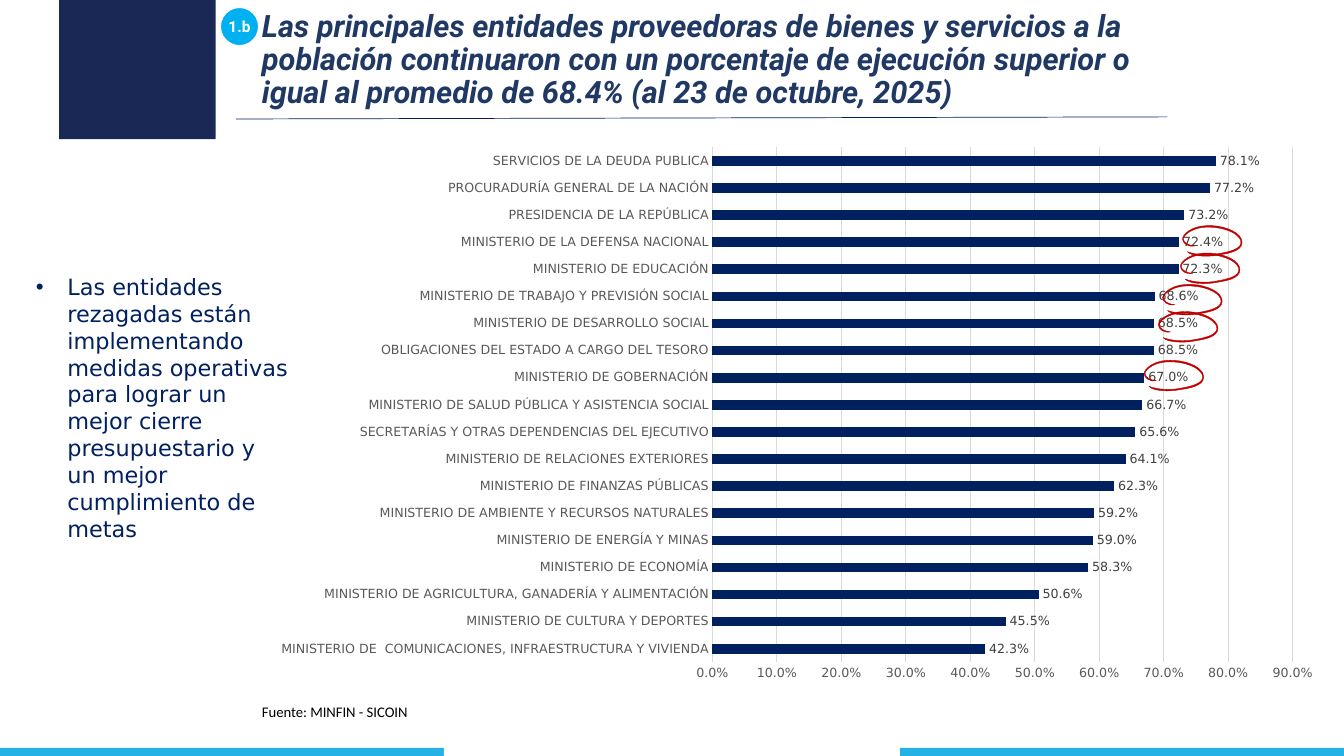
from lxml import etree
from pptx import Presentation
from pptx.chart.data import CategoryChartData
from pptx.dml.color import RGBColor
from pptx.enum.chart import XL_CHART_TYPE, XL_LABEL_POSITION, XL_TICK_MARK
from pptx.enum.shapes import MSO_CONNECTOR, MSO_SHAPE
from pptx.enum.text import MSO_ANCHOR, PP_ALIGN
from pptx.oxml import parse_xml
from pptx.oxml.ns import qn
from pptx.util import Pt

BAR = XL_CHART_TYPE.BAR_CLUSTERED
OUT = XL_LABEL_POSITION.OUTSIDE_END
NO_TICK = XL_TICK_MARK.NONE
RECT, OVAL = MSO_SHAPE.RECTANGLE, MSO_SHAPE.OVAL
TOP, MID, LOW = MSO_ANCHOR.TOP, MSO_ANCHOR.MIDDLE, MSO_ANCHOR.BOTTOM
SANS, HEAD = "DejaVu Sans", "Roboto"
NAVY, RED, GRID, WHITE, SKY = "002060", "C00000", "D9D9D9", "FFFFFF", "23B2E3"

TITLE = ("Las principales entidades proveedoras de bienes y servicios a la "
         "población continuaron con un porcentaje de ejecución superior o "
         "igual al promedio de 68.4% (al 23 de octubre, 2025)")
NOTE = ("Las entidades rezagadas están implementando medidas operativas para "
        "lograr un mejor cierre presupuestario y un mejor cumplimiento de metas")
SOURCE = "Fuente: MINFIN - SICOIN"
RATES = [
    ("MINISTERIO DE  COMUNICACIONES, INFRAESTRUCTURA Y VIVIENDA", 0.423),
    ("MINISTERIO DE CULTURA Y DEPORTES", 0.455),
    ("MINISTERIO DE AGRICULTURA, GANADERÍA Y ALIMENTACIÓN", 0.506),
    ("MINISTERIO DE ECONOMÍA", 0.583),
    ("MINISTERIO DE ENERGÍA Y MINAS", 0.59),
    ("MINISTERIO DE AMBIENTE Y RECURSOS NATURALES", 0.592),
    ("MINISTERIO DE FINANZAS PÚBLICAS", 0.623),
    ("MINISTERIO DE RELACIONES EXTERIORES", 0.641),
    ("SECRETARÍAS Y OTRAS DEPENDENCIAS DEL EJECUTIVO", 0.656),
    ("MINISTERIO DE SALUD PÚBLICA Y ASISTENCIA SOCIAL", 0.667),
    ("MINISTERIO DE GOBERNACIÓN", 0.67),
    ("OBLIGACIONES DEL ESTADO A CARGO DEL TESORO", 0.685),
    ("MINISTERIO DE DESARROLLO SOCIAL", 0.685),
    ("MINISTERIO DE TRABAJO Y PREVISIÓN SOCIAL", 0.686),
    ("MINISTERIO DE EDUCACIÓN", 0.723),
    ("MINISTERIO DE LA DEFENSA NACIONAL", 0.724),
    ("PRESIDENCIA DE LA REPÚBLICA", 0.732),
    ("PROCURADURÍA GENERAL DE LA NACIÓN", 0.772),
    ("SERVICIOS DE LA DEUDA PUBLICA", 0.781),
]
# Plot area within the chart, in percent
PLOT = {"x": 42.1, "y": 2.2, "w": 54, "h": 92.4}

# Hand-drawn ring: start, then curves (two controls and an end), in points
START = (3.5, 19.4)
CURVES = [
    ((10, 21.8), (18.7, 22.2), (25.3, 20.9)),
    ((34.3, 19.4), (41.8, 17.3), (41.8, 12.8)),
    ((41.8, 8), (33.8, 2.9), (21.4, 2)),
    ((7.2, 0.9), (0.7, 7.9), (0.7, 10.2)),
    ((0.7, 12.8), (4.3, 15), (8.8, 15.3)),
    ((3.5, 16.4), (0, 13), (0, 10.2)),
    ((0, 7.8), (5.6, 0), (21.4, 0.8)),
    ((31.5, 1.4), (42.6, 6), (42.6, 12.8)),
    ((42.6, 19.4), (31.5, 20.9), (25.1, 21.9)),
    ((18.7, 23.2), (6.2, 23), (3.5, 19.4)),
]
RINGS = [(843.1, 180), (827.4, 221.8), (830.4, 202.4),
         (817.2, 256.6), (844.6, 160.4)]


def rgb(code):
    return RGBColor.from_string(code)


def shape(kind, box, fill):
    item = slide.shapes.add_shape(kind, *map(Pt, box))
    item.shadow.inherit = False
    item.fill.solid()
    item.fill.fore_color.rgb = rgb(fill)
    item.line.fill.background()
    return item


def style(font, name, size, color):
    font.name, font.size = name, Pt(size)
    font.color.rgb = rgb(color)


def text(box, words, name, size, color, anchor=TOP):
    frame = slide.shapes.add_textbox(*map(Pt, box)).text_frame
    frame.word_wrap = True
    frame.vertical_anchor = anchor
    para = frame.paragraphs[0]
    para.text = words
    style(para.font, name, size, color)
    return para


def ring(left, top):
    """Lay the ring's points as lines, then join each three into a curve."""
    pen = slide.shapes.build_freeform(Pt(left + START[0]), Pt(top + START[1]))
    pen.add_line_segments([(Pt(left + x), Pt(top + y))
                           for curve in CURVES for x, y in curve])
    item = pen.convert_to_shape()
    lines = list(item._element.iter(qn("a:lnTo")))
    for i in range(0, len(CURVES) * 3, 3):
        bend = etree.Element(qn("a:cubicBezTo"))
        lines[i].addprevious(bend)
        for line in lines[i:i + 3]:
            bend.append(line[0])
            line.getparent().remove(line)
    item.shadow.inherit = False
    item.fill.solid()
    item.fill.fore_color.rgb = item.line.color.rgb = rgb(RED)
    item.line.width = Pt(0.25)


def graph(box):
    data = CategoryChartData(number_format="0.0%")
    data.categories = [name for name, _ in RATES]
    data.add_series("Series 1", [rate for _, rate in RATES])
    chart = slide.shapes.add_chart(BAR, *map(Pt, box), data).chart
    chart.has_legend = chart.has_title = False
    style(chart.font, SANS, 10, "000000")
    plot = chart.plots[0]
    plot.gap_width = 182
    plot.vary_by_categories = False
    fill = plot.series[0].format.fill
    fill.solid()
    fill.fore_color.rgb = rgb(NAVY)
    plot.has_data_labels = True
    tags = plot.data_labels
    tags.show_value, tags.position = True, OUT
    tags.number_format, tags.number_format_is_linked = "0.0%", False
    style(tags.font, SANS, 9, "404040")

    cats, vals = chart.category_axis, chart.value_axis
    for axis in (cats, vals):
        axis.major_tick_mark = axis.minor_tick_mark = NO_TICK
        style(axis.tick_labels.font, SANS, 9, "595959")
    vals.minimum_scale, vals.maximum_scale, vals.major_unit = 0, 0.9, 0.1
    vals.tick_labels.number_format = "0.0%"
    vals.tick_labels.number_format_is_linked = False
    vals.format.line.fill.background()
    vals.has_major_gridlines = True
    for line in (cats.format.line, vals.major_gridlines.format.line):
        line.color.rgb, line.width = rgb(GRID), Pt(0.75)

    area = chart._chartSpace.chart.plotArea
    for old in area.findall(qn("c:layout")):
        area.remove(old)
    parts = "<c:layoutTarget val='inner'/><c:xMode val='edge'/><c:yMode val='edge'/>"
    parts += "".join(f"<c:{k} val='{v / 100:.3f}'/>" for k, v in PLOT.items())
    area.insert(0, parse_xml(
        "<c:layout xmlns:c='http://schemas.openxmlformats.org/drawingml/2006/chart'>"
        f"<c:manualLayout>{parts}</c:manualLayout></c:layout>"))


deck = Presentation()
deck.slide_width, deck.slide_height = Pt(960), Pt(540)
slide = deck.slides.add_slide(deck.slide_layouts[6])

for i, fill in enumerate((SKY, WHITE, SKY)):
    shape(RECT, (-8.8 + 325.9 * i, 534.2, 326, 8.6), fill)
shape(RECT, (42.2, -21.6, 111.8, 121), "192854")

badge = shape(OVAL, (157.1, 5, 28, 28), "00B0F0")
badge.line.color.rgb, badge.line.width = rgb(WHITE), Pt(1.5)
frame = badge.text_frame
frame.margin_left = frame.margin_right = frame.margin_top = frame.margin_bottom = 0
frame.vertical_anchor = MID
para = frame.paragraphs[0]
para.text, para.alignment = "1.b", PP_ALIGN.CENTER
style(para.font, HEAD, 11, WHITE)
para.font.bold = True

text((180, 498.7, 500, 20), SOURCE, "Calibri", 10.5, "000000")
graph((185.8, 96.5, 767.5, 398.2))

title = text((180, 2.7, 684, 79.8), TITLE, HEAD, 22, "203864", LOW)
title.line_spacing = 0.9
title.font.bold = title.font.italic = True

rule = slide.shapes.add_connector(MSO_CONNECTOR.STRAIGHT, Pt(168.5), Pt(85), Pt(833.8), Pt(83.5))
rule.line.color.rgb, rule.line.width = rgb(NAVY), Pt(0.5)
etree.SubElement(rule._element.spPr, qn("a:effectLst"))

for left, top in RINGS:
    ring(left, top)

note = text((18.6, 191.5, 194.4, 220.3), NOTE, SANS, 16, NAVY)
props = note._p.get_or_add_pPr()
props.set("marL", str(Pt(22.5)))
props.set("indent", str(-Pt(22.5)))
props.insert(0, etree.Element(qn("a:buFont"), typeface="Arial"))
props.insert(1, etree.Element(qn("a:buChar"), char="•"))

deck.save("out.pptx")
